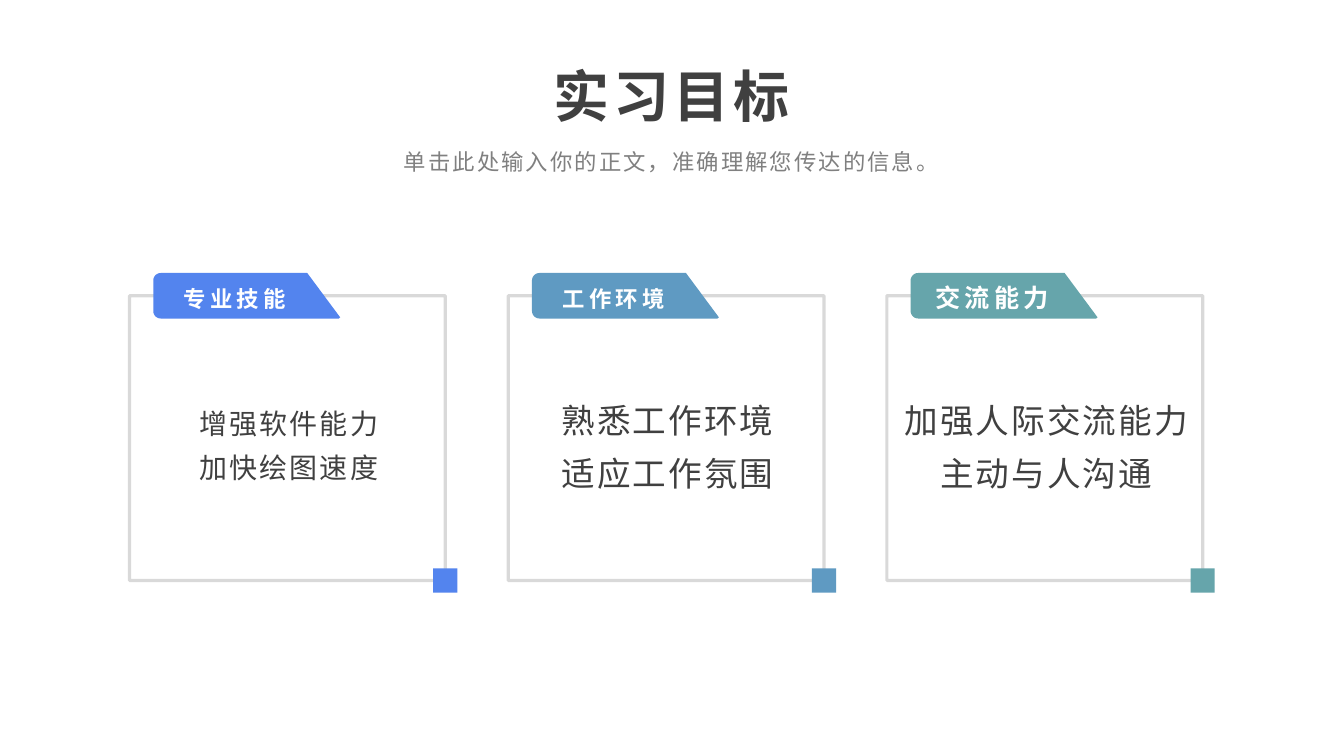
import math

from lxml import etree
from pptx import Presentation
from pptx.dml.color import RGBColor
from pptx.enum import shapes, text
from pptx.oxml import ns
from pptx.util import Pt


def paint(color_format, color):
    color_format.rgb = RGBColor.from_string(color)


def add_text(box, lines, size, color, line_spacing, letter_spacing,
             bold=False, anchor=text.MSO_ANCHOR.MIDDLE):
    """Add a centred text box at box = (left, top, width, height) in points."""
    frame = slide.shapes.add_textbox(*map(Pt, box)).text_frame
    frame.word_wrap = True
    frame.margin_left = frame.margin_right = 0
    frame.vertical_anchor = anchor
    for index, line in enumerate(lines):
        paragraph = frame.paragraphs[0] if index == 0 else frame.add_paragraph()
        paragraph.alignment = text.PP_ALIGN.CENTER
        paragraph.line_spacing = line_spacing
        run = paragraph.add_run()
        run.text = line
        run.font.name = "Arial"
        run.font.size = Pt(size)
        run.font.bold = bold
        paint(run.font.color, color)
        properties = run.font._element
        properties.set("spc", str(int(letter_spacing * 100)))
        etree.SubElement(properties, ns.qn("a:ea"), typeface="Arial")


presentation = Presentation()
presentation.slide_width = Pt(960)
presentation.slide_height = Pt(540)
slide = presentation.slides.add_slide(presentation.slide_layouts[6])

add_text((172.8, 31, 613.4, 64.8), ["实习目标"], 40, "404040", 1.2, 3, bold=True)
add_text((175, 96.5, 609.8, 32.4), ["单击此处输入你的正文，准确理解您传达的信息。"],
         16, "808080", 1.3, 1.5, anchor=text.MSO_ANCHOR.TOP)

# Heading, heading size, heading line spacing, body lines, body size, accent
cards = [
    ("专业技能", 16, 1.4, ["增强软件能力", "加快绘图速度"], 20, "5384EE"),
    ("工作环境", 16, 1.4, ["熟悉工作环境", "适应工作氛围"], 24, "5F9AC2"),
    ("交流能力", 18, 1.3, ["加强人际交流能力", "主动与人沟通"], 24, "66A5AB"),
]
CARD_LEFT, CARD_TOP, CARD_WIDTH, CARD_HEIGHT = 92.5, 211.2, 225.6, 203.5
CARD_PITCH = 270.5
CORNER = 17.3
TAB_TOP, TAB_BOTTOM, TAB_RADIUS = 195, 227.5, 5.4

for index, (heading, heading_size, heading_spacing, body, body_size, accent) in enumerate(cards):
    left = CARD_LEFT + index * CARD_PITCH

    border = slide.shapes.add_shape(
        shapes.MSO_SHAPE.RECTANGLE, Pt(left), Pt(CARD_TOP), Pt(CARD_WIDTH), Pt(CARD_HEIGHT))
    border.shadow.inherit = False
    border.fill.background()
    border.line.width = Pt(2.25)
    paint(border.line.color, "000000")
    line_color = border.line._ln.find(".//" + ns.qn("a:srgbClr"))
    etree.SubElement(line_color, ns.qn("a:alpha"), val="15000")

    corner = slide.shapes.add_shape(
        shapes.MSO_SHAPE.RECTANGLE,
        Pt(left + CARD_WIDTH - CORNER / 2), Pt(CARD_TOP + CARD_HEIGHT - CORNER / 2),
        Pt(CORNER), Pt(CORNER))

    add_text((left + 4, 231.8, 219.6, 165.6), body, body_size, "404040", 1.3, 1.5)

    tab_left = left + 17
    outline = [(tab_left + 110, TAB_TOP), (tab_left + 133.5, TAB_BOTTOM - 0.8),
               (tab_left + 132.5, TAB_BOTTOM)]
    for center_y, start in ((TAB_BOTTOM - TAB_RADIUS, 90), (TAB_TOP + TAB_RADIUS, 180)):
        for angle in range(start, start + 91, 10):
            outline.append((tab_left + TAB_RADIUS * (1 + math.cos(math.radians(angle))),
                            center_y + TAB_RADIUS * math.sin(math.radians(angle))))
    builder = slide.shapes.build_freeform(Pt(outline[0][0]), Pt(outline[0][1]))
    builder.add_line_segments([(Pt(x), Pt(y)) for x, y in outline[1:]], close=True)
    tab = builder.convert_to_shape()

    for shape in (corner, tab):
        shape.shadow.inherit = False
        shape.fill.solid()
        paint(shape.fill.fore_color, accent)
        shape.line.fill.background()

    add_text((left + 6.2, 191.5, 138.2, 36), [heading], heading_size, "FFFFFF",
             heading_spacing, 3, bold=True)

presentation.save("out.pptx")
